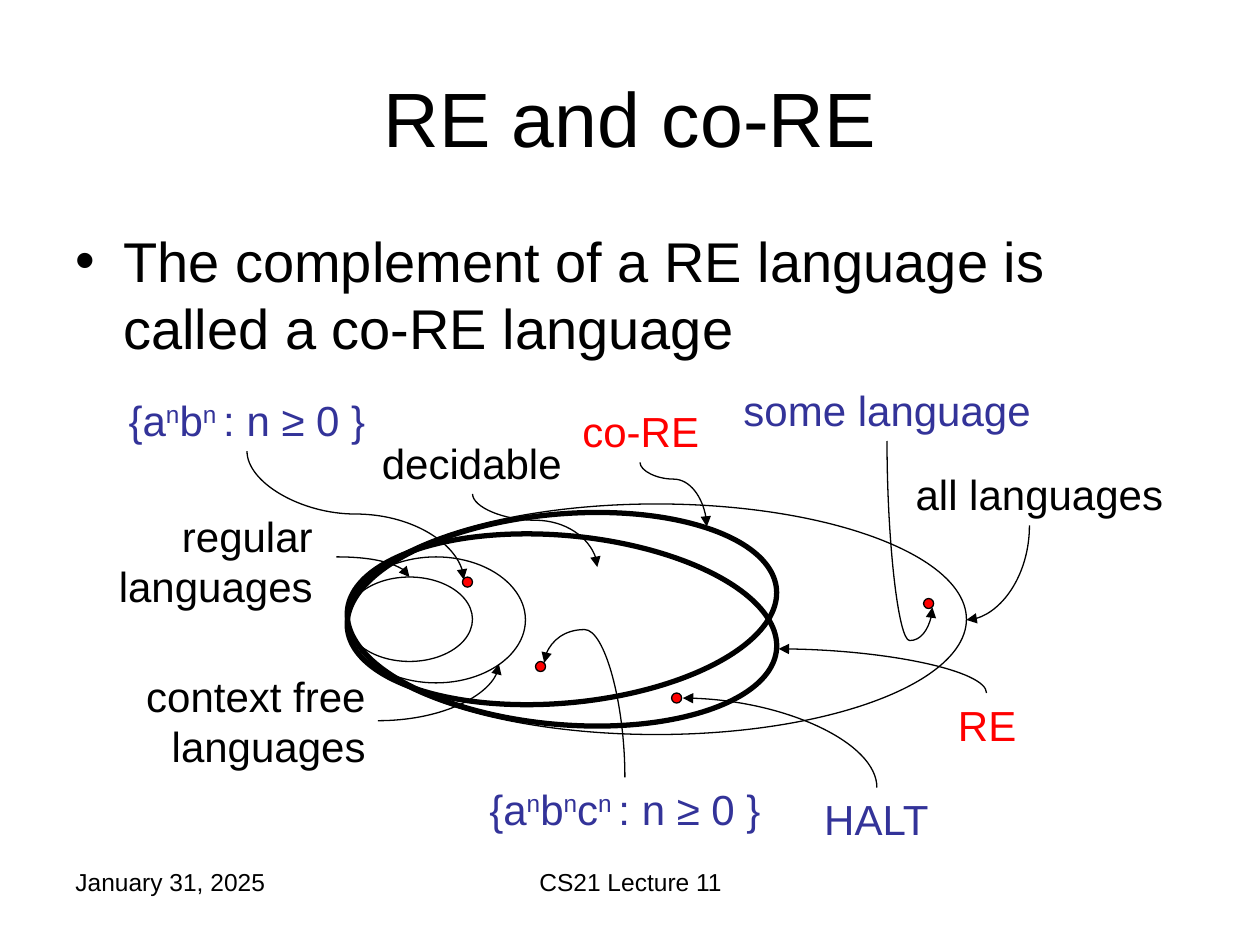
from dataclasses import dataclass
from typing import Optional

from lxml.etree import SubElement
from pptx import Presentation
from pptx.dml.color import RGBColor
from pptx.enum.shapes import MSO_CONNECTOR, MSO_SHAPE
from pptx.enum.text import MSO_ANCHOR, PP_ALIGN
from pptx.oxml.ns import qn
from pptx.util import Inches, Pt

BLACK = RGBColor(0x00, 0x00, 0x00)
RED = RGBColor(0xFF, 0x00, 0x00)
BLUE = RGBColor(0x33, 0x33, 0x99)
FONT = "Arial"
DOT = 0.08


@dataclass
class Label:
    """Text in which every second part between bars is superscript."""
    text: str
    x: float
    y: float
    w: float
    h: float = 0.5
    color: RGBColor = BLACK
    align: PP_ALIGN = PP_ALIGN.CENTER
    size: int = 24


@dataclass
class Oval:
    x: float
    y: float
    w: float
    h: float
    line: float = 0.75
    rotation: float = 0
    fill: Optional[RGBColor] = None


@dataclass
class Arrow:
    """Curve with one bend, or with two bends when bend is given."""
    x1: float
    y1: float
    x2: float
    y2: float
    bend: Optional[float] = None
    vertical: bool = True


LABELS = [
    Label("January 31, 2025", 0.5, 6.83, 2.33, align=PP_ALIGN.LEFT, size=14),
    Label("CS21 Lecture 11", 3.42, 6.83, 3.17, size=14),
    Label("regular languages", 0.75, 4, 1.83, 0.9, align=PP_ALIGN.RIGHT),
    Label("context free languages", 0.67, 5.27, 2.33, 0.9, align=PP_ALIGN.RIGHT),
    Label("all languages", 7, 3.67, 2.33, align=PP_ALIGN.RIGHT),
    Label("decidable", 2.58, 3.42, 2.33),
    Label("RE", 6.67, 5.5, 2.33, color=RED),
    Label("co-RE", 3.92, 3.17, 2.33, color=RED),
    Label("{a|n|b|n |: n ≥ 0 }", 0.5, 3.08, 2.92, color=BLUE),
    Label("{a|n|b|n|c|n |: n ≥ 0 }", 3.5, 6.17, 2.92, color=BLUE),
    Label("some language", 5.58, 3, 2.92, color=BLUE),
    Label("HALT", 6.33, 6.25, 1.25, color=BLUE),
]

CLASSES = [
    Oval(2.75, 4, 4.92, 1.83),
    Oval(2.75, 4.42, 1.42, 1),
    Oval(2.75, 4.58, 1, 0.67),
    Oval(2.75, 4.25, 3.42, 1.5, line=3, rotation=5.2),
    Oval(2.75, 4.08, 3.42, 1.5, line=3, rotation=-5.2),
]

LANGUAGES = [(3.67, 4.58), (4.25, 5.25), (7.33, 4.75), (5.33, 5.5)]

ARROWS = [
    Arrow(2.67, 4.42, 3.25, 4.58, vertical=False),
    Arrow(3, 5.72, 3.96, 5.27, vertical=False),
    Arrow(8.17, 4.17, 7.67, 4.92),
    Arrow(7.83, 5.5, 6.18, 5.15),
    Arrow(6.96, 6.25, 5.42, 5.54),
    Arrow(3.75, 3.92, 4.74, 4.5, bend=0.36),
    Arrow(1.96, 3.58, 3.68, 4.6, bend=0.49),
    Arrow(4.96, 6.17, 4.32, 5.26, bend=1.29),
    Arrow(7.04, 3.5, 7.4, 4.82, bend=1.2),
    Arrow(5.08, 3.67, 5.61, 4.18, bend=0.26),
]


def style_run(r, size: int, color: RGBColor) -> None:
    r.font.name = FONT
    r.font.size = Pt(size)
    r.font.color.rgb = color


def add_label(s, label: Label) -> None:
    box = s.shapes.add_textbox(*map(Inches, (label.x, label.y, label.w, label.h)))
    tf = box.text_frame
    tf.word_wrap = True
    p = tf.paragraphs[0]
    p.alignment = label.align
    for i, part in enumerate(label.text.split("|")):
        r = p.add_run()
        r.text = part
        style_run(r, label.size, label.color)
        if i % 2:
            r.font._element.set("baseline", "30000")


def add_oval(s, oval: Oval) -> None:
    sp = s.shapes.add_shape(MSO_SHAPE.OVAL, *map(Inches, (oval.x, oval.y, oval.w, oval.h)))
    sp.shadow.inherit = False
    sp.rotation = oval.rotation
    sp.line.color.rgb = BLACK
    sp.line.width = Pt(oval.line)
    if oval.fill is None:
        sp.fill.background()
    else:
        sp.fill.solid()
        sp.fill.fore_color.rgb = oval.fill


def add_arrow(s, a: Arrow) -> None:
    """A curve that leaves vertically is a horizontal one turned about its centre."""
    x1, y1, x2, y2 = a.x1, a.y1, a.x2, a.y2
    dx, dy = x2 - x1, y2 - y1
    if a.vertical:
        cx, cy = (x1 + x2) / 2, (y1 + y2) / 2
        half_w, half_h = abs(dy) / 2, abs(dx) / 2
        x1, y1, x2, y2 = cx - half_w, cy - half_h, cx + half_w, cy + half_h
    cxn = s.shapes.add_connector(MSO_CONNECTOR.CURVE, *map(Inches, (x1, y1, x2, y2)))
    cxn.line.color.rgb = BLACK
    cxn.line.width = Pt(0.75)
    sp_pr = cxn._element.spPr
    if a.vertical:
        xfrm = sp_pr.find(qn("a:xfrm"))
        xfrm.set("rot", str((270 if dx > 0 else 90) * 60000))
        if (dx > 0) == (dy > 0):
            xfrm.set("flipH", "1")
    geom = sp_pr.find(qn("a:prstGeom"))
    if a.bend is None:
        geom.set("prst", "curvedConnector2")
    else:
        guide = SubElement(geom.find(qn("a:avLst")), qn("a:gd"))
        guide.set("name", "adj1")
        guide.set("fmla", f"val {round(a.bend * 100000)}")
    SubElement(sp_pr.find(qn("a:ln")), qn("a:tailEnd")).set("type", "triangle")
    SubElement(sp_pr, qn("a:effectLst"))


def add_title(s, text: str) -> None:
    title = s.shapes.title
    title.left, title.top, title.width, title.height = map(Inches, (0.5, 0.3, 9, 1.25))
    tf = title.text_frame
    tf.text = text
    tf.vertical_anchor = MSO_ANCHOR.MIDDLE
    p = tf.paragraphs[0]
    p.alignment = PP_ALIGN.CENTER
    style_run(p.runs[0], 44, BLACK)


def add_bullet(s, text: str) -> None:
    tf = s.shapes.add_textbox(*map(Inches, (0.5, 1.75, 9, 1.33))).text_frame
    tf.word_wrap = True
    tf.text = text
    p = tf.paragraphs[0]
    style_run(p.runs[0], 32, BLACK)
    p_pr = p._p.get_or_add_pPr()
    p_pr.set("marL", str(Inches(0.38)))
    p_pr.set("indent", str(-Inches(0.38)))
    SubElement(p_pr, qn("a:buFont")).set("typeface", FONT)
    SubElement(p_pr, qn("a:buChar")).set("char", "•")


def main() -> None:
    prs = Presentation()
    prs.slide_width, prs.slide_height = Inches(10), Inches(7.5)
    s = prs.slides.add_slide(prs.slide_layouts[5])
    add_title(s, "RE and co-RE")
    add_bullet(s, "The complement of a RE language is called a co-RE language")
    for oval in CLASSES:
        add_oval(s, oval)
    for x, y in LANGUAGES:
        add_oval(s, Oval(x, y, DOT, DOT, fill=RED))
    for label in LABELS:
        add_label(s, label)
    for arrow in ARROWS:
        add_arrow(s, arrow)
    prs.save("out.pptx")


if __name__ == "__main__":
    main()
